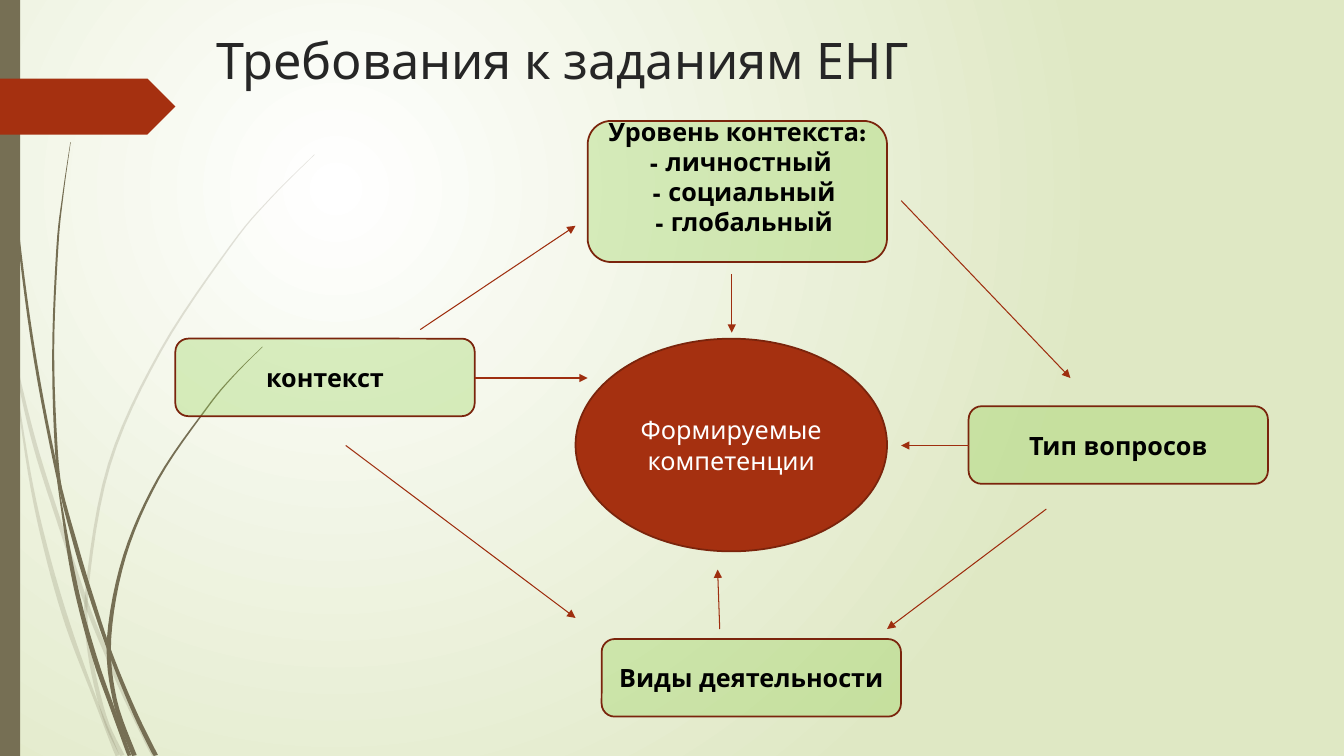
"""Builds a slide on the requirements for science literacy tasks."""
from dataclasses import dataclass
from math import hypot
from typing import NamedTuple

from lxml import etree
from pptx import Presentation
from pptx.dml.color import RGBColor
from pptx.enum.shapes import MSO_CONNECTOR, MSO_SHAPE
from pptx.enum.text import MSO_ANCHOR, PP_ALIGN
from pptx.oxml.ns import qn
from pptx.util import Pt

RECTANGLE, ROUNDED, OVAL = MSO_SHAPE.RECTANGLE, MSO_SHAPE.ROUNDED_RECTANGLE, MSO_SHAPE.OVAL
POINTER = MSO_SHAPE.PENTAGON
STRAIGHT = MSO_CONNECTOR.STRAIGHT
TOP, MIDDLE = MSO_ANCHOR.TOP, MSO_ANCHOR.MIDDLE
LEFT, CENTER = PP_ALIGN.LEFT, PP_ALIGN.CENTER


@dataclass(frozen=True)
class Theme:
    font: str = "League Spartan"
    title_size: float = 36
    body_size: float = 18
    outline_width: float = 1.25
    arrow_width: float = 0.75
    glow: str = "FFFFFF"
    backdrop: str = "DFE8C4"
    grass: str = "766F54"
    accent: str = "A53010"
    outline: str = "7A240C"
    arrow: str = "9E2E0F"
    box: str = "92D050"
    title: str = "262626"
    dark: str = "000000"
    light: str = "FFFFFF"
    grass_alpha: int = 20
    box_alpha: int = 32


class Line(NamedTuple):
    text: str
    indent: float = 0


class Box(NamedTuple):
    left: float
    top: float
    lines: list
    height: float = 55.4
    bottom_inset: float = 3.6


class Knot(NamedTuple):
    x: float
    y: float
    width: float


THEME = Theme()
WIDTH, HEIGHT = 960, 540
BOX_WIDTH = 213.8
STEPS_PER_SPAN = 6
THINNEST = 0.3

TITLE = Line("Требования к заданиям ЕНГ")
TITLE_FRAME = (147.6, 17.3, 758.2, 52.6)
COMPETENCES = Line("Формируемые компетенции")
COMPETENCES_FRAME = (411.1, 241.9, 222.5, 151.9)
SIDE_BAR_FRAME = (0, 0, 14.4, HEIGHT)
POINTER_FRAME = (0, 56.2, 125.3, 39.9)

CONTEXT = Box(125.3, 241.9, [Line("контекст")])
LEVEL = Box(419.8, 86.4, [
    Line("Уровень контекста:"),
    Line("- личностный", 4.7),
    Line("- социальный", 9.4),
    Line("- глобальный", 9.4),
], height=100.8, bottom_inset=25)
ACTIVITY = Box(429.8, 456.5, [Line("Виды деятельности")])
QUESTIONS = Box(691.9, 290.2, [Line("Тип вопросов")])

ARROWS_AROUND = [
    (300.2, 235.4, 411.1, 161.3),
    (643.7, 143.3, 764.6, 270),
    (247, 318.2, 411.1, 441.4),
    (747.4, 363.6, 633.6, 449.3),
]
ARROWS_TO_CENTRE = [
    (522.7, 195.8, 522.7, 237.6),
    (339.1, 270, 419.8, 270),
    (691.9, 318.2, 643.7, 318.2),
    (514.1, 449.3, 512.6, 406.8),
]

PALE_BLADES = {
    "outer": [(0, 209, 2), (11, 260, 2), (25, 318, 3), (43, 375, 3),
              (62, 432, 3), (77, 469, 3), (90, 499, 3), (110, 540, 3.3)],
    "inner": [(8, 252, 0.5), (21, 338, 2), (33, 393, 3), (48.5, 446.5, 3.5),
              (67.5, 498, 2.2), (84, 540, 3)],
    "arched": [(224.6, 110.5, 0.3), (193, 142, 0.6), (164.5, 176, 1),
               (114.5, 251, 1.5), (78, 332, 2), (62.3, 420, 2.2),
               (64, 465, 3), (74.7, 512, 3), (87.5, 540, 3.2)],
}
DARK_BLADES = {
    "outer": [(2.6, 0, 0.7), (5.4, 79, 0.8), (13, 167, 1.5), (25, 256, 2),
              (41, 339, 2.2), (54, 389, 3), (65, 425.5, 3), (79, 467, 2.6),
              (96, 508.5, 3), (111.3, 540, 3.3)],
    "inner": [(41, 343, 0.5), (50.4, 400.5, 2.8), (58.5, 437.5, 3.1),
              (69, 474, 3.4), (80, 505, 3), (92.5, 540, 2.7)],
    "upright": [(50.4, 101.5, 0.3), (45, 139, 0.8), (41, 176.5, 1.4),
                (38, 251, 1.4), (40.5, 325, 2), (46, 363, 0.5)],
    "arched": [(187.5, 247.7, 0.3), (166.3, 269, 0.7), (147.3, 292, 1),
               (113, 342, 1.5), (89, 397, 2.2), (78, 455, 3),
               (82, 500, 3), (96, 540, 3.6)],
}


def blend(before, start, end, after, t):
    return (2 * start + (end - before) * t
            + (2 * before - 5 * start + 4 * end - after) * t ** 2
            + (3 * start - before - 3 * end + after) * t ** 3) / 2


def smooth(knots):
    padded = [knots[0], *knots, knots[-1]]
    curve = []
    for span in zip(padded, padded[1:], padded[2:], padded[3:]):
        for step in range(STEPS_PER_SPAN):
            t = step / STEPS_PER_SPAN
            curve.append(Knot(*(blend(*values, t) for values in zip(*span))))
    return [*curve, Knot(*knots[-1])]


def blade_outline(knots):
    spine = smooth(knots)
    left_edge, right_edge = [], []
    for index, knot in enumerate(spine):
        before = spine[max(index - 1, 0)]
        after = spine[min(index + 1, len(spine) - 1)]
        run, rise = after.x - before.x, after.y - before.y
        reach = max(knot.width, THINNEST) / 2 / hypot(run, rise)
        for edge, side in ((left_edge, -1), (right_edge, 1)):
            x = knot.x + side * rise * reach
            y = knot.y - side * run * reach
            edge.append((max(x, 0), min(max(y, 0), HEIGHT)))
    return left_edge + right_edge[::-1]


def paint_background(page):
    fill = page.background.fill
    fill.gradient()
    for stop, color in zip(fill.gradient_stops, (THEME.glow, THEME.backdrop)):
        stop.color.rgb = RGBColor.from_string(color)
    gradient = page.element.find(".//" + qn("a:gradFill"))
    gradient.remove(gradient.find(qn("a:lin")))
    radial = etree.SubElement(gradient, qn("a:path"), path="circle")
    etree.SubElement(radial, qn("a:fillToRect"), l="50000", t="50000", r="100000", b="100000")


def paint(shape, color, alpha=100, outline=None):
    shape.shadow.inherit = False
    shape.fill.solid()
    shape.fill.fore_color.rgb = RGBColor.from_string(color)
    if alpha < 100:
        tint = shape.element.spPr.find(qn("a:solidFill"))[0]
        etree.SubElement(tint, qn("a:alpha"), val=str(alpha * 1000))
    if outline:
        shape.line.color.rgb = RGBColor.from_string(outline)
        shape.line.width = Pt(THEME.outline_width)
    else:
        shape.line.fill.background()


def add_painted(page, kind, frame, color, alpha=100, outline=None):
    shape = page.shapes.add_shape(kind, *map(Pt, frame))
    paint(shape, color, alpha, outline)
    return shape


def add_blade(page, knots, alpha):
    corners = [(Pt(x), Pt(y)) for x, y in blade_outline(knots)]
    builder = page.shapes.build_freeform(*corners[0])
    builder.add_line_segments(corners[1:], close=True)
    paint(builder.convert_to_shape(), THEME.grass, alpha)


def write(shape, lines, size, color, bold=False, align=CENTER, anchor=MIDDLE):
    frame = shape.text_frame
    frame.word_wrap = True
    frame.vertical_anchor = anchor
    for index, line in enumerate(lines):
        para = frame.add_paragraph() if index else frame.paragraphs[0]
        para.alignment = align
        if line.indent:
            para._p.get_or_add_pPr().set("marL", str(Pt(line.indent)))
        span = para.add_run()
        span.text = line.text
        span.font.name, span.font.size, span.font.bold = THEME.font, Pt(size), bold
        span.font.color.rgb = RGBColor.from_string(color)


def add_box(page, box):
    frame = (box.left, box.top, BOX_WIDTH, box.height)
    shape = add_painted(page, ROUNDED, frame, THEME.box, THEME.box_alpha, THEME.outline)
    shape.text_frame.margin_bottom = Pt(box.bottom_inset)
    write(shape, box.lines, THEME.body_size, THEME.dark, bold=True)


def add_arrow(page, ends):
    arrow = page.shapes.add_connector(STRAIGHT, *map(Pt, ends))
    arrow.line.color.rgb = RGBColor.from_string(THEME.arrow)
    arrow.line.width = Pt(THEME.arrow_width)
    etree.SubElement(arrow.line._get_or_add_ln(), qn("a:tailEnd"), type="triangle")
    etree.SubElement(arrow._element.spPr, qn("a:effectLst"))


def main():
    deck = Presentation()
    deck.slide_width, deck.slide_height = Pt(WIDTH), Pt(HEIGHT)
    page = deck.slides.add_slide(deck.slide_layouts[6])
    paint_background(page)
    for blades, alpha in ((PALE_BLADES, THEME.grass_alpha), (DARK_BLADES, 100)):
        for knots in blades.values():
            add_blade(page, knots, alpha)
    add_painted(page, RECTANGLE, SIDE_BAR_FRAME, THEME.grass)
    add_painted(page, POINTER, POINTER_FRAME, THEME.accent)
    heading = page.shapes.add_textbox(*map(Pt, TITLE_FRAME))
    write(heading, [TITLE], THEME.title_size, THEME.title, align=LEFT, anchor=TOP)
    oval = add_painted(page, OVAL, COMPETENCES_FRAME, THEME.accent, outline=THEME.outline)
    write(oval, [COMPETENCES], THEME.body_size, THEME.light)
    for box in (CONTEXT, LEVEL, ACTIVITY, QUESTIONS):
        add_box(page, box)
    for ends in ARROWS_AROUND + ARROWS_TO_CENTRE:
        add_arrow(page, ends)
    deck.save("out.pptx")


if __name__ == "__main__":
    main()
